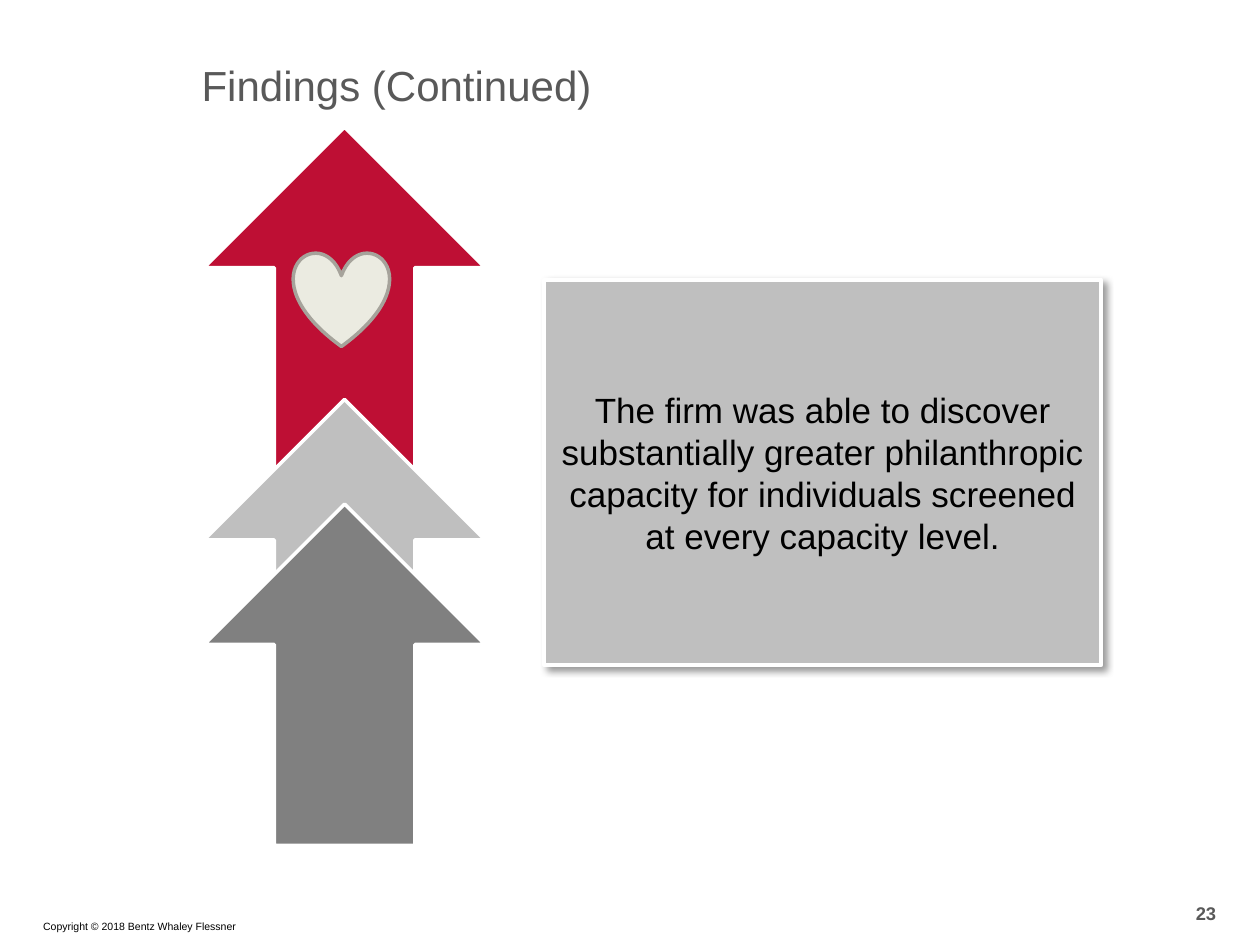
from lxml import etree
from pptx import Presentation, util as u
from pptx.dml.color import RGBColor
from pptx.enum import shapes, text
from pptx.oxml.ns import qn

COLOURS = {"red": "BE0F34", "light": "BFBFBF", "dark": "808080", "cream": "EBEBE1",
           "taupe": "A6A39B", "white": "FFFFFF", "grey": "595959", "black": "000000"}
TITLE = "Findings (Continued)"
FINDING = ("The firm was able to discover substantially greater philanthropic capacity "
           "for individuals screened at every capacity level.")
COPYRIGHT = "Copyright © 2018 Bentz Whaley Flessner"
PAGE_NUMBER = "23"

ARROW_LEFT, ARROW_WIDTH = 1.62, 2.23
ARROWS = [("red", 1.01, 4.37), ("light", 3.17, 2.6), ("dark", 4, 2.71)]  # colour, top, height
HEART = (2.33, 2, 0.76, 0.75)
PANEL = (4.32, 2.22, 4.42, 3.06)
ALIGN, ANCHOR = text.PP_ALIGN, text.MSO_ANCHOR


def colour(name):
    return RGBColor.from_string(COLOURS[name])


def write(box, words, size, ink="black", align=ALIGN.LEFT, anchor=ANCHOR.MIDDLE, bold=False):
    frame = box.text_frame
    frame.word_wrap = True
    frame.vertical_anchor = anchor
    para = frame.paragraphs[0]
    para.alignment = align
    span = para.add_run()
    span.text = words
    span.font.name, span.font.size, span.font.bold = "Arial", u.Pt(size), bold
    span.font.color.rgb = colour(ink)


def place(box, left, top, width, height):
    box.left, box.top, box.width, box.height = map(u.Inches, (left, top, width, height))


def add_shape(page, kind, area, fill, line="white", weight=2):
    shape = page.shapes.add_shape(kind, *map(u.Inches, area))
    shape.shadow.inherit = False
    shape.fill.solid()
    shape.fill.fore_color.rgb = colour(fill)
    shape.line.color.rgb = colour(line)
    shape.line.width = u.Pt(weight)
    return shape


def add_textbox(page, area, words, size, **style):
    write(page.shapes.add_textbox(*map(u.Inches, area)), words, size, **style)


def cast_shadow(shape, blur=4, distance=3, angle=45, opacity=40):
    effects = shape._element.spPr.find(qn("a:effectLst"))
    shadow = etree.SubElement(effects, qn("a:outerShdw"), blurRad=str(u.Pt(blur)),
                              dist=str(u.Pt(distance)), dir=str(angle * 60000),
                              algn="tl", rotWithShape="0")
    ink = etree.SubElement(shadow, qn("a:srgbClr"), val=COLOURS["black"])
    etree.SubElement(ink, qn("a:alpha"), val=str(opacity * 1000))


def main():
    deck = Presentation()
    deck.slide_width, deck.slide_height = u.Inches(10), u.Inches(7.5)
    page = deck.slides.add_slide(deck.slide_layouts[5])
    kinds = shapes.MSO_SHAPE

    place(page.shapes.title, 1.5, 0.5, 7.75, 0.42)
    write(page.shapes.title, TITLE, 24, ink="grey", anchor=ANCHOR.BOTTOM)

    for fill, top, height in ARROWS:
        add_shape(page, kinds.UP_ARROW, (ARROW_LEFT, top, ARROW_WIDTH, height), fill)
    add_shape(page, kinds.HEART, HEART, "cream", line="taupe")

    panel = add_shape(page, kinds.RECTANGLE, PANEL, "light", weight=2.25)
    cast_shadow(panel)
    write(panel, FINDING, 20, align=ALIGN.CENTER)

    add_textbox(page, (7.92, 7.08, 1.83, 0.33), PAGE_NUMBER, 10.5,
                ink="grey", align=ALIGN.RIGHT, bold=True)
    add_textbox(page, (-0.45, 7.25, 2.42, 0.2), COPYRIGHT, 6,
                align=ALIGN.RIGHT, anchor=ANCHOR.TOP)
    deck.save("out.pptx")


if __name__ == "__main__":
    main()
